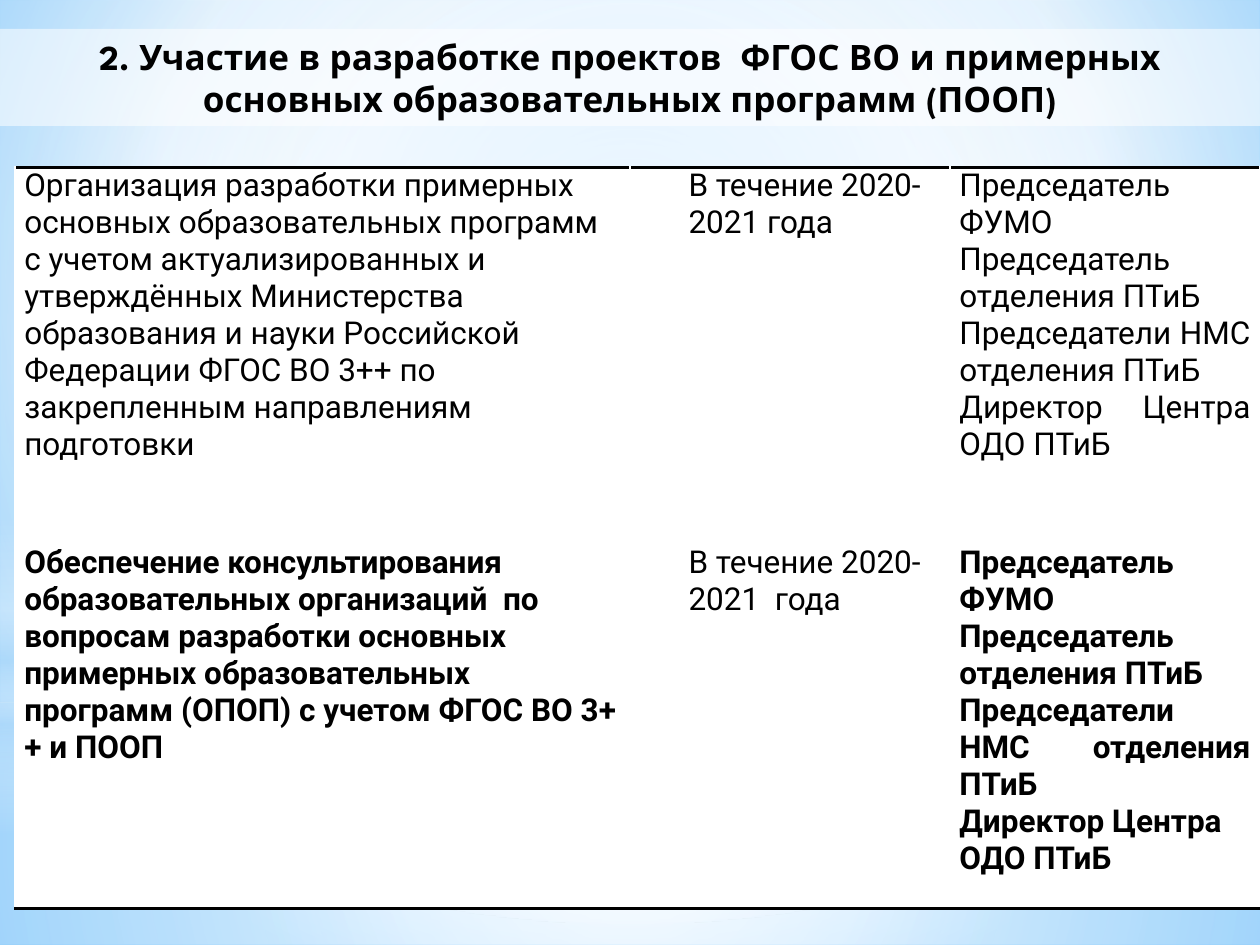
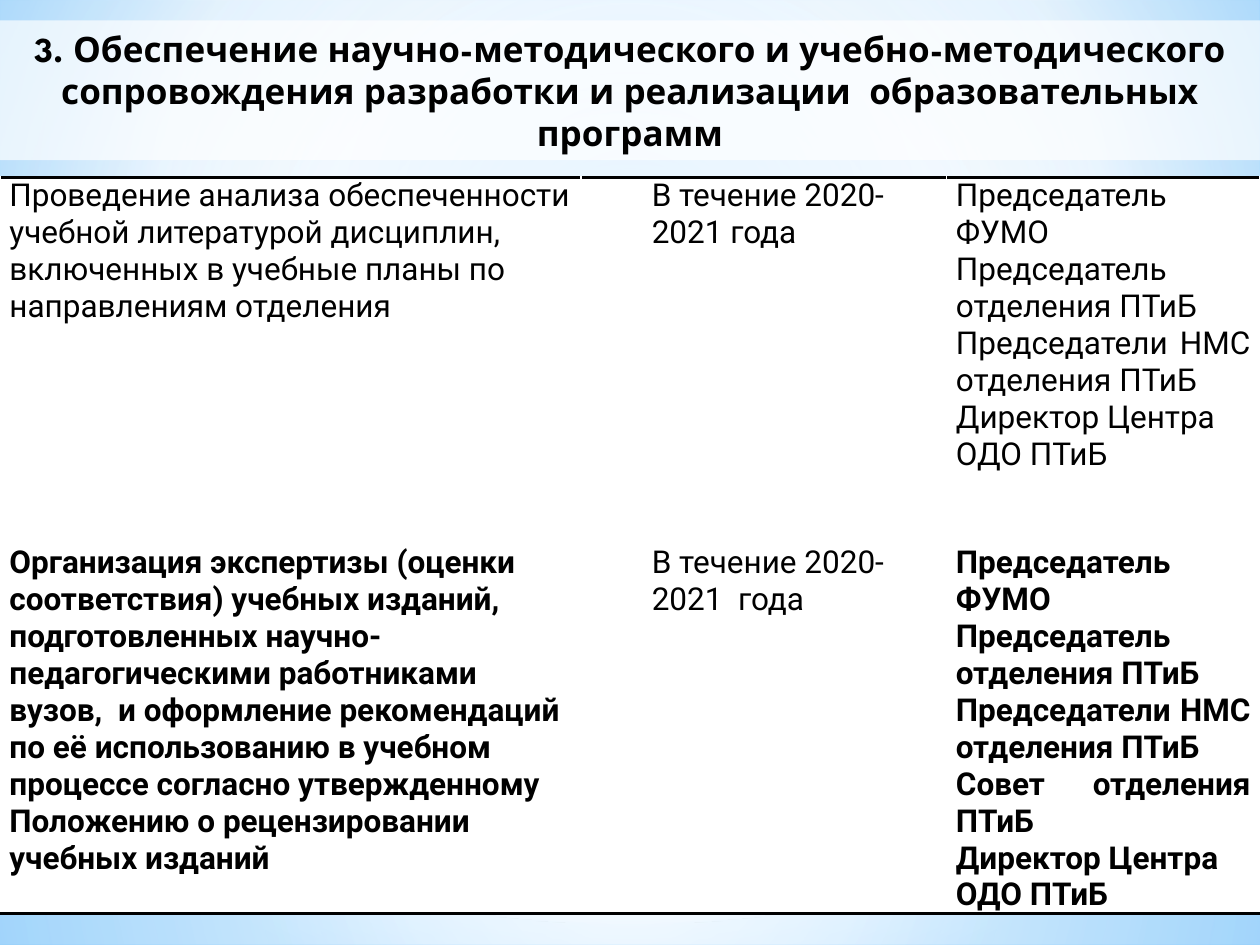
from pptx import Presentation, util as u
from pptx.dml.color import RGBColor
from pptx.enum import shapes as es, text as et
from pptx.oxml import parse_xml
from pptx.oxml.ns import nsdecls

WIDE, HIGH = 25.4, 19.05
INK, WHITE, PALE = "000000", "FFFFFF", "B4DCFA"
HEAD, BODY = "League Spartan", "Roboto"
MID = (50, 50, 50, 50)

# Gradient stops: position, colour, opacity. A tuple of insets means circular.
SKY = [(0, "9ED5FF", 100), (60, WHITE, 100), (100, "5BB9FF", 100)]
DECOR = [
    (es.MSO_SHAPE.RECTANGLE, 14.17, 4.88, MID,
     [(0, WHITE, 91), (37, WHITE, 76), (100, PALE, 79)]),
    (es.MSO_SHAPE.RECTANGLE, 0, 14.17, MID,
     [(0, WHITE, 89), (48, WHITE, 62), (100, PALE, 79)]),
    (es.MSO_SHAPE.RECTANGLE, 10.46, 6.35, None,
     [(0, WHITE, 0), (29, WHITE, 30), (45, PALE, 40),
      (55, WHITE, 26), (65, PALE, 60), (100, WHITE, 0)]),
    (es.MSO_SHAPE.OVAL, 4.45, 14.17, MID,
     [(0, WHITE, 100), (56, WHITE, 0)]),
]

CHAIRS = ["Председатель ФУМО", "Председатель отделения ПТиБ",
          "Председатели НМС отделения ПТиБ"]
COUNCIL = "Совет отделения ПТиБ"
CENTRE = "Директор Центра ОДО ПТиБ"
TERMS = ["В течение 2020-2021 года", "В течение 2020-2021  года"]

SLIDES = [
    dict(
        title="2. Участие в разработке проектов  ФГОС ВО и примерных "
              "основных образовательных программ (ПООП)",
        band=(0.58, 1.96, 55), spot=(0.3, 3.38), indent=0.99,
        cols=(12.4, 6.45, 6.25), rows=(7.59, 7.34),
        tasks=[
            "Организация разработки примерных основных образовательных "
            "программ с учетом актуализированных и утверждённых "
            "Министерства образования и науки Российской Федерации "
            "ФГОС ВО 3++ по закрепленным направлениям подготовки",
            "Обеспечение консультирования образовательных организаций  по "
            "вопросам разработки основных примерных образовательных "
            "программ (ОПОП) с учетом ФГОС ВО 3++ и ПООП"],
        staff=[CHAIRS + [CENTRE], CHAIRS + [CENTRE]],
        full=(True, False)),
    dict(
        title="3. Обеспечение научно-методического и учебно-методического "
              "сопровождения разработки и реализации  образовательных "
              "программ",
        band=(0.41, 2.82, 68), spot=(0, 3.58), indent=1.24,
        cols=(11.71, 7.37, 6.32), rows=(7.39, 7.44),
        tasks=[
            "Проведение анализа обеспеченности учебной литературой "
            "дисциплин, включенных в учебные планы по направлениям "
            "отделения",
            "Организация экспертизы (оценки соответствия) учебных изданий, "
            "подготовленных научно-педагогическими работниками вузов,  и "
            "оформление рекомендаций по её использованию в учебном процессе "
            "согласно утвержденному Положению о рецензировании учебных "
            "изданий"],
        staff=[CHAIRS + [CENTRE], CHAIRS + [COUNCIL, CENTRE]],
        full=(False, False)),
]


def rgb(code):
    return RGBColor.from_string(code)


def shade(fill, owner, stops, inset):
    """Give the first gradient inside owner these stops and this shape."""
    fill.gradient()
    marks = "".join(
        f'<a:gs pos="{pos * 1000}"><a:srgbClr val="{code}">'
        f'<a:alpha val="{alpha * 1000}"/></a:srgbClr></a:gs>'
        for pos, code, alpha in stops)
    if inset:
        sides = " ".join(f'{side}="{part * 1000}"'
                         for side, part in zip("ltrb", inset))
        form = f'<a:path path="circle"><a:fillToRect {sides}/></a:path>'
    else:
        form = '<a:lin ang="5400000" scaled="0"/>'
    old = owner.xpath(".//a:gradFill")[0]
    old.getparent().replace(old, parse_xml(
        f'<a:gradFill {nsdecls("a")} rotWithShape="1">'
        f'<a:gsLst>{marks}</a:gsLst>{form}</a:gradFill>'))


def dress(master, slide):
    """Draw the shared backdrop on slide, then move it to the master."""
    shade(master.background.fill, master.element, SKY, (20, 10, 20, 60))
    for i, (kind, top, high, inset, stops) in enumerate(DECOR):
        shape = slide.shapes.add_shape(
            kind, 0, u.Cm(top), u.Cm(WIDE), u.Cm(high))
        shape.shadow.inherit = False
        shape.line.fill.background()
        shade(shape.fill, shape.element, stops, inset)
        shape.element.xpath(".//p:cNvPr")[0].set("id", str(20 + i))
        master.shapes.element.insert(2 + i, shape.element)


def style(para, face, size, bold, align):
    font = para.font
    font.name, font.size, font.bold = face, u.Pt(size), bold
    font.color.rgb = rgb(INK)
    para.alignment = align


def head(slide, data):
    top, high, alpha = data["band"]
    band = slide.shapes.title
    band.left, band.top = 0, u.Cm(top)
    band.width, band.height = u.Cm(WIDE), u.Cm(high)
    band.fill.solid()
    band.fill.fore_color.rgb = rgb(WHITE)
    band.element.xpath("./p:spPr/a:solidFill/a:srgbClr")[0].append(parse_xml(
        f'<a:alpha {nsdecls("a")} val="{alpha * 1000}"/>'))
    frame = band.text_frame
    frame.text = data["title"]
    frame.word_wrap = True
    frame.auto_size = et.MSO_AUTO_SIZE.NONE
    frame.vertical_anchor = et.MSO_ANCHOR.MIDDLE
    style(frame.paragraphs[0], HEAD, 20, True, et.PP_ALIGN.CENTER)


def rule(cell, side):
    cell._tc.get_or_add_tcPr().insert(0, parse_xml(
        f'<a:ln{side} {nsdecls("a")} w="25400"><a:solidFill>'
        f'<a:srgbClr val="{INK}"/></a:solidFill></a:ln{side}>'))


def write(cell, lines, bold, aligns):
    cell.margin_left = cell.margin_right = u.Cm(0.19)
    cell.margin_top = cell.margin_bottom = 0
    cell.fill.solid()
    cell.fill.fore_color.rgb = rgb(WHITE)
    cell.text = "\n".join(lines)
    for para, align in zip(cell.text_frame.paragraphs, aligns):
        style(para, BODY, 18, bold, align)


def plan(slide, data):
    cols, rows = data["cols"], data["rows"]
    left, top = data["spot"]
    grid = slide.shapes.add_table(
        len(rows), len(cols), u.Cm(left), u.Cm(top),
        u.Cm(sum(cols)), u.Cm(sum(rows))).table
    grid.first_row = grid.horz_banding = False
    for col, wide in zip(grid.columns, cols):
        col.width = u.Cm(wide)
    start, just = et.PP_ALIGN.LEFT, et.PP_ALIGN.JUSTIFY
    for r, high in enumerate(rows):
        grid.rows[r].height = u.Cm(high)
        task, term, team = (grid.cell(r, c) for c in range(3))
        staff, strong = data["staff"][r], r == 1
        ends = [just] * (len(staff) - 1) + [just if data["full"][r] else start]
        write(task, [data["tasks"][r]], strong, [start])
        write(term, [TERMS[r]], False, [start])
        write(team, staff, strong, ends)
        para = term.text_frame.paragraphs[0]
        para._p.get_or_add_pPr().set("marL", str(u.Cm(data["indent"])))
        for cell in (task, term, team):
            rule(cell, "TB"[r])


def main():
    deck = Presentation()
    deck.slide_width, deck.slide_height = u.Cm(WIDE), u.Cm(HIGH)
    for i, data in enumerate(SLIDES):
        slide = deck.slides.add_slide(deck.slide_layouts[5])
        if i == 0:
            dress(deck.slide_master, slide)
        head(slide, data)
        plan(slide, data)
    deck.save("out.pptx")


if __name__ == "__main__":
    main()
